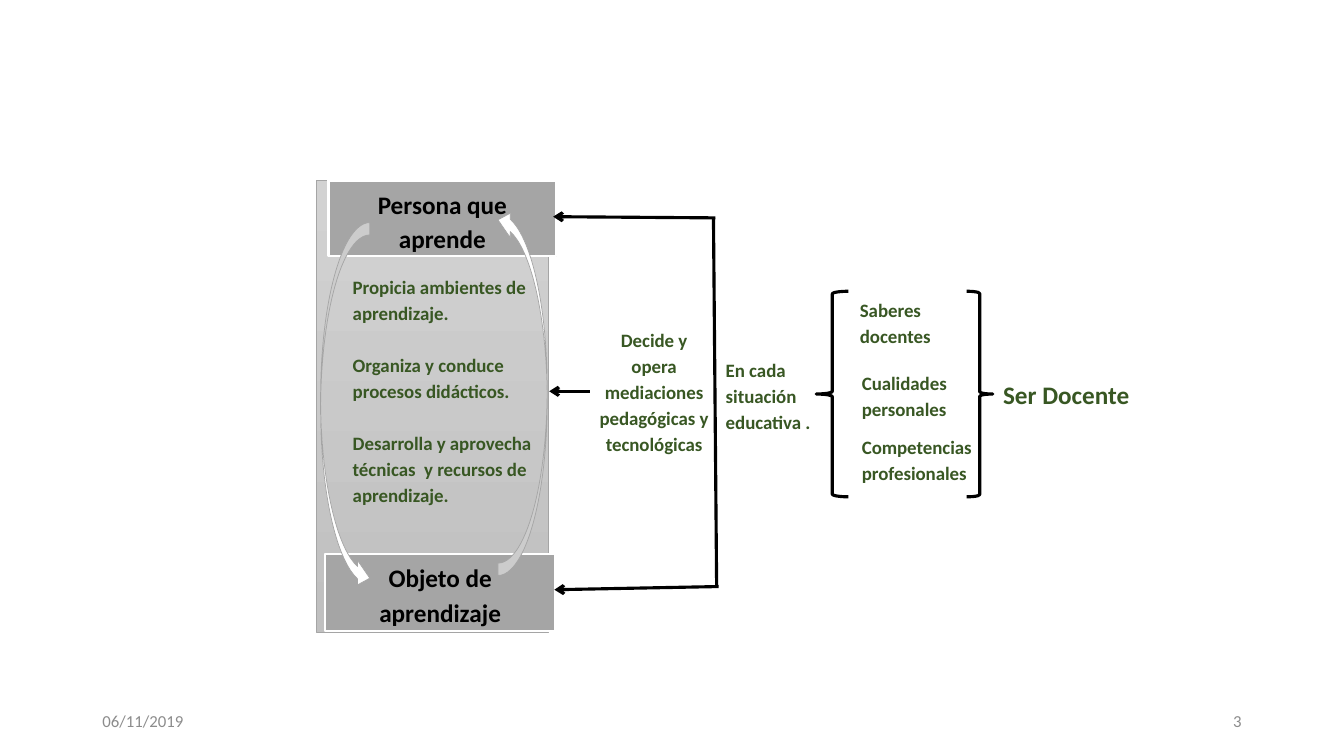
from dataclasses import dataclass

from lxml.etree import SubElement
from pptx import Presentation
from pptx.dml.color import RGBColor
from pptx.enum.shapes import MSO_CONNECTOR, MSO_SHAPE
from pptx.enum.text import MSO_ANCHOR, PP_ALIGN
from pptx.oxml.ns import qn
from pptx.util import Cm, Pt


@dataclass(frozen=True)
class Theme:
    font: str = "Calibri"
    black: str = "000000"
    white: str = "FFFFFF"
    grey: str = "A5A5A5"
    panel_top: str = "D2D2D2"
    panel_bottom: str = "C0C0C0"
    green: str = "385723"
    footer: str = "8C8C8C"
    heading_size: float = 18
    body_size: float = 13.5
    footer_size: float = 12
    stroke: float = 2.25
    border: float = 1.5
    hairline: float = 0.5
    line_spacing: float = 1.15
    blank_line: float = 18.6


THEME = Theme()


@dataclass(frozen=True)
class Box:
    """A region of the slide, in centimetres."""
    left: float
    top: float
    width: float
    height: float

    def inner(self, dx, dy, width, height):
        return Box(self.left + dx, self.top + dy, width, height)

    def lengths(self):
        return Cm(self.left), Cm(self.top), Cm(self.width), Cm(self.height)


def color(code):
    return RGBColor.from_string(code)


def write(shape, paragraphs, size, ink, bold=True, align=PP_ALIGN.LEFT,
          anchor=MSO_ANCHOR.TOP, spacing=THEME.line_spacing, gap=0, margins=(0.18, 0.1)):
    frame = shape.text_frame
    frame.word_wrap = True
    frame.vertical_anchor = anchor
    frame.margin_left = frame.margin_right = Cm(margins[0])
    frame.margin_top = frame.margin_bottom = Cm(margins[1])
    frame.text = "\n".join(paragraphs)
    for paragraph in frame.paragraphs:
        paragraph.alignment = align
        paragraph.line_spacing = spacing
        paragraph.space_after = Pt(gap)
        for run in paragraph.runs:
            run.font.name = THEME.font
            run.font.size = Pt(size)
            run.font.bold = bold
            run.font.color.rgb = color(ink)


def add_label(slide, box, paragraphs, size=THEME.body_size, ink=THEME.green, **style):
    write(slide.shapes.add_textbox(*box.lengths()), paragraphs, size, ink, **style)


def add_figure(slide, preset, box, fill, line, width):
    figure = slide.shapes.add_shape(preset, *box.lengths())
    figure.shadow.inherit = False
    if fill:
        figure.fill.solid()
        figure.fill.fore_color.rgb = color(fill)
    else:
        figure.fill.background()
    figure.line.color.rgb = color(line)
    figure.line.width = Pt(width)
    return figure


def add_stroke(slide, box, start, end, arrow=True):
    """Draw a line between two points given relative to the box."""
    stroke = slide.shapes.add_connector(
        MSO_CONNECTOR.STRAIGHT,
        Cm(box.left + start[0]), Cm(box.top + start[1]),
        Cm(box.left + end[0]), Cm(box.top + end[1]))
    stroke.line.color.rgb = color(THEME.black)
    stroke.line.width = Pt(THEME.stroke)
    if arrow:
        SubElement(stroke.line._get_or_add_ln(), qn("a:tailEnd"), type="arrow")
    SubElement(stroke._element.spPr, qn("a:effectLst"))


def learning_panel(slide, box):
    panel = add_figure(slide, MSO_SHAPE.RECTANGLE, box, THEME.grey, THEME.grey, THEME.hairline)
    panel.fill.gradient()
    panel.fill.gradient_angle = 270
    for stop, shade in zip(panel.fill.gradient_stops, (THEME.panel_top, THEME.panel_bottom)):
        stop.color.rgb = color(shade)

    poles = (
        ("Persona que aprende", box.inner(0.3, 0, 5.74, 1.91), MSO_ANCHOR.TOP),
        ("Objeto de aprendizaje", box.inner(0.22, 9.42, 5.79, 1.93), MSO_ANCHOR.MIDDLE),
    )
    for name, place, anchor in poles:
        pole = add_figure(slide, MSO_SHAPE.RECTANGLE, place, THEME.grey, THEME.white, THEME.border)
        write(pole, [name], THEME.heading_size, THEME.black,
              align=PP_ALIGN.CENTER, anchor=anchor, gap=7.5)

    add_label(slide, box.inner(0.73, 2.21, 5, 6.63), [
        "Propicia ambientes de aprendizaje.",
        "Organiza y conduce procesos didácticos.",
        "Desarrolla y aprovecha  técnicas  y recursos de aprendizaje.",
    ], gap=THEME.blank_line)

    for dx, dy, rotation in ((0.1, 1.06, 0), (4.57, 0.68, 180)):
        cycle = add_figure(slide, MSO_SHAPE.CURVED_RIGHT_ARROW, box.inner(dx, dy, 1.24, 9.27),
                           THEME.white, THEME.grey, THEME.hairline)
        cycle.rotation = rotation


def mediation_bracket(slide, box):
    add_stroke(slide, box, (4.14, 0.03), (4.22, 9.32), arrow=False)
    add_stroke(slide, box, (4.19, 0.03), (0.1, 0))
    add_stroke(slide, box, (1.02, 4.4), (0, 4.4))
    add_stroke(slide, box, (4.27, 9.32), (0.13, 9.4))
    add_label(slide, box.inner(1.02, 2.64, 3.25, 3.51),
              ["Decide y opera mediaciones pedagógicas y tecnológicas"], align=PP_ALIGN.CENTER)


def teacher_profile(slide, box):
    add_label(slide, box.inner(0, 1.5, 3.71, 2.18), ["En cada situación educativa ."])
    braces = ((MSO_SHAPE.LEFT_BRACE, 2.46, 0.81), (MSO_SHAPE.RIGHT_BRACE, 6.25, 0.66))
    for preset, dx, width in braces:
        add_figure(slide, preset, box.inner(dx, 0, width, box.height),
                   None, THEME.black, THEME.stroke)
    qualities = (
        ("Saberes docentes", 3.38, 0, 2.41),
        ("Cualidades personales", 3.43, 1.85, 2.62),
        ("Competencias profesionales", 3.43, 3.45, 3.28),
    )
    for quality, dx, dy, width in qualities:
        add_label(slide, box.inner(dx, dy, width, 1.52), [quality])
    add_label(slide, box.inner(6.99, 2.01, 3.71, 1.02), ["Ser Docente"], THEME.heading_size)


def footer(slide, box):
    width = 7.62
    parts = (("06/11/2019", 0, PP_ALIGN.LEFT), ("3", box.width - width, PP_ALIGN.RIGHT))
    for content, dx, align in parts:
        add_label(slide, box.inner(dx, 0, width, box.height), [content],
                  THEME.footer_size, THEME.footer, bold=False, align=align,
                  anchor=MSO_ANCHOR.MIDDLE, spacing=1.0, margins=(0.25, 0.13))


def main():
    deck = Presentation()
    deck.slide_width, deck.slide_height = Cm(33.87), Cm(19.05)
    slide = deck.slides.add_slide(deck.slide_layouts[6])
    learning_panel(slide, Box(7.98, 4.55, 5.84, 11.38))
    mediation_bracket(slide, Box(13.84, 5.46, 4.27, 9.4))
    teacher_profile(slide, Box(18.11, 7.34, 10.7, 5.18))
    footer(slide, Box(2.33, 17.66, 29.21, 1.01))
    deck.save("out.pptx")


if __name__ == "__main__":
    main()
